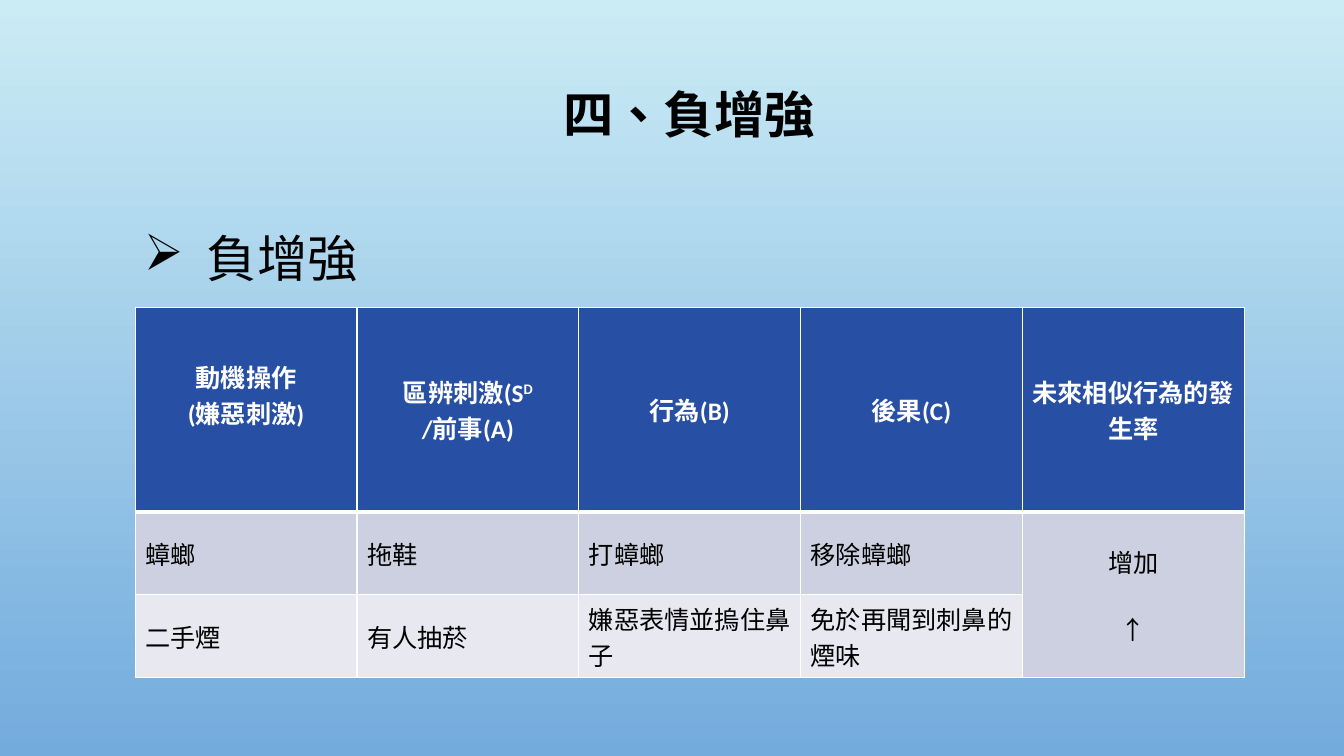
from dataclasses import dataclass

from lxml import etree
from pptx import Presentation
from pptx.dml.color import RGBColor
from pptx.enum.lang import MSO_LANGUAGE_ID
from pptx.enum.text import MSO_ANCHOR, MSO_AUTO_SIZE, PP_ALIGN
from pptx.oxml.ns import qn
from pptx.util import Inches, Pt

LEFT, CENTER = PP_ALIGN.LEFT, PP_ALIGN.CENTER
TOP, MIDDLE = MSO_ANCHOR.TOP, MSO_ANCHOR.MIDDLE
NO_FIT = MSO_AUTO_SIZE.NONE
LANG = MSO_LANGUAGE_ID.TRADITIONAL_CHINESE
LATIN, CJK = "Calibri", "Noto Sans CJK SC"
BLACK = RGBColor(0x00, 0x00, 0x00)
WHITE = RGBColor(0xFF, 0xFF, 0xFF)
NAVY = RGBColor(0x27, 0x4F, 0xA4)
MIST = RGBColor(0xCD, 0xD0, 0xE0)
PALE = RGBColor(0xE8, 0xE9, 0xF0)
SKY = RGBColor(0xCB, 0xEC, 0xF5)
BLUE = RGBColor(0x73, 0xAB, 0xDD)


@dataclass
class Span:
    text: str
    font: str = LATIN
    rise: int = 0


@dataclass
class Row:
    high: float
    fill: RGBColor
    ink: RGBColor
    bold: bool
    align: PP_ALIGN
    edges: dict[str, float]
    cells: list[list[list[Span]]]


HEAD = Row(2.03, NAVY, WHITE, True, CENTER, {"L": 1, "R": 1, "T": 1, "B": 3}, [
    [[Span("動機操作")], [Span("(嫌惡刺激)")]],
    [[Span("區辨刺激(S"), Span("D", rise=30000)], [Span("/前事(A)")]],
    [[Span("行為(B)")]],
    [[Span("後果(C)")]],
    [[Span("未來相似行為的發生率")]],
])
ROACH = Row(0.82, MIST, BLACK, False, LEFT, {"L": 1, "R": 1, "T": 3, "B": 1}, [
    [[Span("蟑螂")]],
    [[Span("拖鞋")]],
    [[Span("打蟑螂")]],
    [[Span("移除蟑螂")]],
    [[Span("增加")], [Span("↑", CJK)]],
])
SMOKE = Row(0.82, PALE, BLACK, False, LEFT, {"L": 1, "R": 1, "T": 1, "B": 1}, [
    [[Span("二手煙")]],
    [[Span("有人抽菸")]],
    [[Span("嫌惡表情並摀住鼻子")]],
    [[Span("免於再聞到刺鼻的煙味")]],
    [],
])
ROWS = [HEAD, ROACH, SMOKE]
COLS = 5


def add_run(para, span: Span, size: float, ink: RGBColor, bold: bool) -> None:
    run = para.add_run()
    run.text = span.text
    font = run.font
    font.name, font.size, font.bold = span.font, Pt(size), bold
    font.color.rgb = ink
    font.language_id = LANG
    if span.rise:
        font._element.set("baseline", str(span.rise))


def write(frame, lines: list[list[Span]], size: float, ink: RGBColor,
          bold: bool, align: PP_ALIGN) -> None:
    for i, line in enumerate(lines):
        para = frame.add_paragraph() if i else frame.paragraphs[0]
        para.alignment = align
        for span in line:
            add_run(para, span, size, ink, bold)


def place(shape, left: float, top: float, wide: float, high: float) -> None:
    shape.left, shape.top = Inches(left), Inches(top)
    shape.width, shape.height = Inches(wide), Inches(high)


def set_frame(frame, anchor: MSO_ANCHOR) -> None:
    frame.word_wrap = True
    frame.auto_size = NO_FIT
    frame.vertical_anchor = anchor
    frame.paragraphs[0].line_spacing = 0.9
    frame.paragraphs[0].space_before = Pt(0)


def add_edges(cell, edges: dict[str, float]) -> None:
    props = cell._tc.get_or_add_tcPr()
    for side, width in edges.items():
        line = etree.SubElement(props, qn(f"a:ln{side}"), w=str(Pt(width)))
        fill = etree.SubElement(line, qn("a:solidFill"))
        etree.SubElement(fill, qn("a:srgbClr"), val=str(WHITE))


def add_grid(slide) -> None:
    frame = slide.shapes.add_table(len(ROWS), COLS, Inches(1.34), Inches(3.05),
                                   Inches(11), Inches(3.67))
    table = frame.table
    table.horz_banding = False
    for col in table.columns:
        col.width = Inches(2.2)
    for r, row in enumerate(ROWS):
        table.rows[r].height = Inches(row.high)
        for c, lines in enumerate(row.cells):
            cell = table.cell(r, c)
            add_edges(cell, row.edges)
            cell.fill.solid()
            cell.fill.fore_color.rgb = row.fill
            cell.vertical_anchor = MIDDLE
            align = CENTER if c == COLS - 1 else row.align
            write(cell.text_frame, lines, 18, row.ink, row.bold, align)
    table.cell(0, 0).margin_bottom = Inches(0.35)
    trend = table.cell(1, COLS - 1)
    trend.merge(table.cell(2, COLS - 1))
    trend.text_frame.paragraphs[1].space_before = Pt(22)


def add_title(slide) -> None:
    title = slide.shapes.title
    place(title, 1, 1.72, 2.98, 1.75)
    frame = title.text_frame
    set_frame(frame, MIDDLE)
    para = frame.paragraphs[0]
    props = para._p.get_or_add_pPr()
    props.set("marL", str(Inches(0.62)))
    props.set("indent", str(Inches(-0.62)))
    etree.SubElement(props, qn("a:buFont"), typeface="Wingdings")
    etree.SubElement(props, qn("a:buChar"), char="Ø")
    write(frame, [[Span("負增強")]], 36, BLACK, False, CENTER)


def add_heading(slide) -> None:
    box = slide.shapes.add_textbox(Inches(1.17), Inches(0.84),
                                   Inches(11.33), Inches(1.75))
    set_frame(box.text_frame, TOP)
    write(box.text_frame, [[Span("四、負增強", CJK)]], 36, BLACK, True, CENTER)


def paint(slide) -> None:
    fill = slide.background.fill
    fill.gradient()
    fill.gradient_angle = 270
    for stop, tint, spot in zip(fill.gradient_stops, (SKY, BLUE), (0, 1)):
        stop.color.rgb = tint
        stop.position = spot


def main() -> None:
    deck = Presentation()
    deck.slide_width, deck.slide_height = Inches(13.33), Inches(7.5)
    slide = deck.slides.add_slide(deck.slide_layouts[5])
    paint(slide)
    add_title(slide)
    add_grid(slide)
    add_heading(slide)
    deck.save("out.pptx")


if __name__ == "__main__":
    main()
